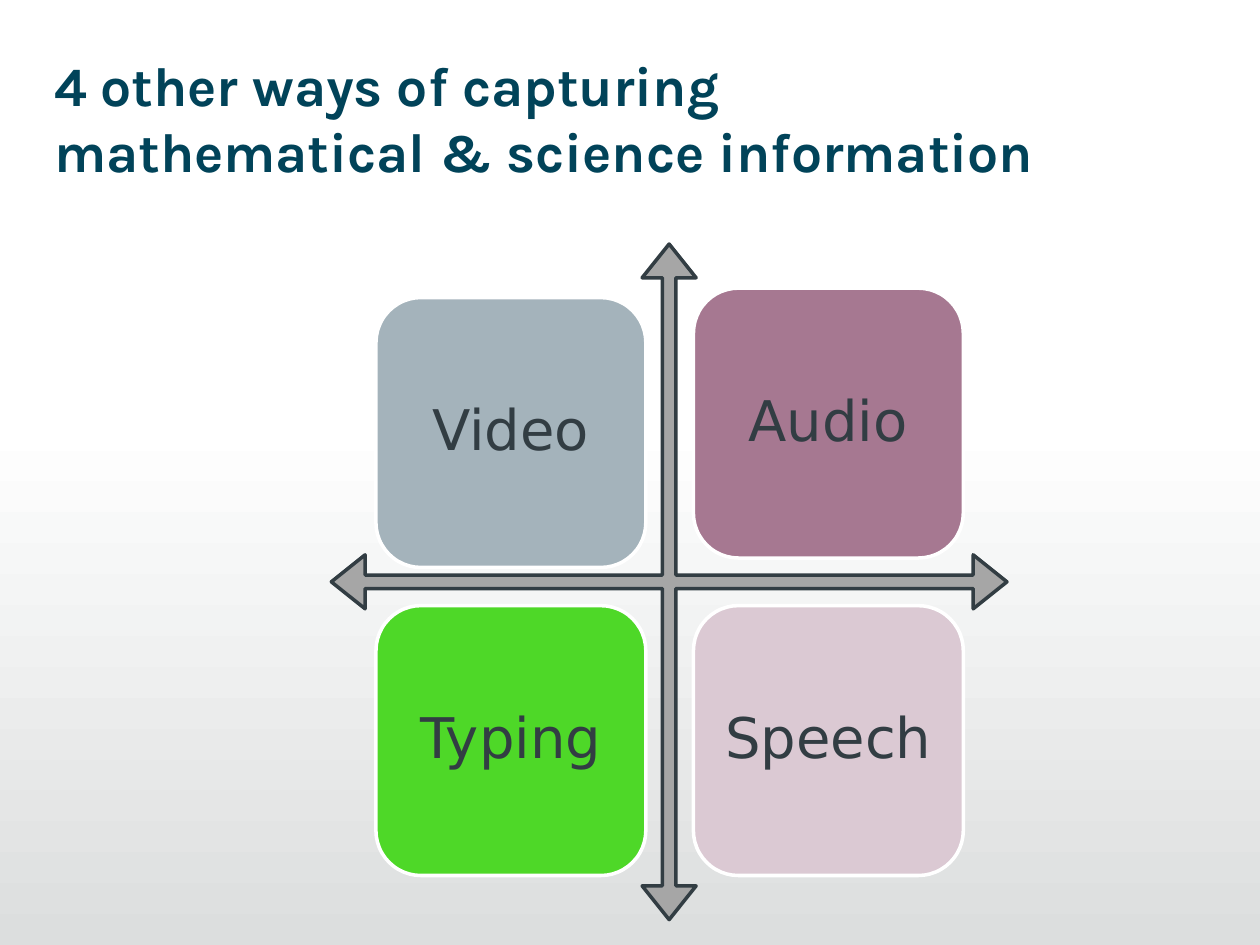
"""Build a slide with four ways of capturing information around a crossed arrow."""
from dataclasses import dataclass

from pptx import Presentation
from pptx.dml.color import RGBColor
from pptx.enum.shapes import MSO_SHAPE
from pptx.enum.text import MSO_ANCHOR, MSO_AUTO_SIZE, PP_ALIGN
from pptx.util import Cm, Pt

RECTANGLE = MSO_SHAPE.RECTANGLE
ROUNDED = MSO_SHAPE.ROUNDED_RECTANGLE
QUAD_ARROW = MSO_SHAPE.QUAD_ARROW
TOP, MIDDLE = MSO_ANCHOR.TOP, MSO_ANCHOR.MIDDLE
LEFT, CENTER = PP_ALIGN.LEFT, PP_ALIGN.CENTER
NO_AUTOFIT = MSO_AUTO_SIZE.NONE


@dataclass(frozen=True)
class Theme:
    title_font: str = "Karla"
    label_font: str = "DejaVu Sans"
    title_size: float = 31.5
    label_size: float = 32
    outline: float = 2
    title: str = "014359"
    ink: str = "323D43"
    white: str = "FFFFFF"
    fade: str = "DCDEDE"
    arrow: str = "A6A6A6"
    video: str = "A4B3BB"
    audio: str = "A67891"
    typing: str = "4ED828"
    speech: str = "DBC9D3"


def add_block(kind, left, top, width, height, fill, line):
    block = page.shapes.add_shape(kind, Cm(left), Cm(top), Cm(width), Cm(height))
    block.shadow.inherit = False
    block.fill.solid()
    block.fill.fore_color.rgb = RGBColor.from_string(fill)
    block.line.color.rgb = RGBColor.from_string(line)
    block.line.width = Pt(theme.outline)
    return block


def write(box, text, frame_format, paragraph_format, font_format, color):
    frame = box.text_frame
    frame.text = text
    para = frame.paragraphs[0]
    for target, values in (
        (frame, frame_format),
        (para, paragraph_format),
        (para.runs[0].font, font_format),
    ):
        for name, value in values.items():
            setattr(target, name, value)
    para.runs[0].font.color.rgb = RGBColor.from_string(color)


theme = Theme()
deck = Presentation()
deck.slide_width, deck.slide_height = Cm(25.4), Cm(19.05)
page = deck.slides.add_slide(deck.slide_layouts[5])

title = page.shapes.title
title_place = {"left": Cm(1.09), "top": Cm(0.91), "width": Cm(20.4), "height": Cm(2.01)}
for name, value in title_place.items():
    setattr(title, name, value)
write(
    title,
    "4 other ways of capturing mathematical & science information",
    {
        "word_wrap": True,
        "auto_size": NO_AUTOFIT,
        "vertical_anchor": TOP,
        "margin_left": Cm(0),
        "margin_right": Cm(0.25),
        "margin_top": Cm(0.13),
        "margin_bottom": Cm(0.13),
    },
    {"alignment": LEFT},
    {"name": theme.title_font, "size": Pt(theme.title_size), "bold": True},
    theme.title,
)

backdrop = add_block(RECTANGLE, 0, 8.46, 25.4, 10.59, theme.white, theme.white)
backdrop.line.fill.background()
backdrop.fill.gradient()
backdrop.fill.gradient_angle = 270
for stop, color, position in zip(
    backdrop.fill.gradient_stops, (theme.white, theme.fade), (0, 1)
):
    stop.color.rgb = RGBColor.from_string(color)
    stop.position = position

arrow = add_block(QUAD_ARROW, 6.68, 4.92, 13.62, 13.62, theme.arrow, theme.ink)
for index, value in enumerate((0.02, 0.04, 0.05)):
    arrow.adjustments[index] = value

card_size = 5.44
left_column, right_column = 7.58, 13.98
bottom_row = 12.21
cards = (
    ("Video", left_column, 6.0, theme.video),
    ("Audio", right_column, 5.81, theme.audio),
    ("Typing", left_column, bottom_row, theme.typing),
    ("Speech", right_column, bottom_row, theme.speech),
)
label_frame = {"word_wrap": True, "vertical_anchor": MIDDLE}
for side in ("left", "right", "top", "bottom"):
    label_frame[f"margin_{side}"] = Cm(0.33)
label_paragraph = {"alignment": CENTER, "line_spacing": 0.9}
label_font = {"name": theme.label_font, "size": Pt(theme.label_size)}
for label, left, top, fill in cards:
    card = add_block(ROUNDED, left, top, card_size, card_size, fill, theme.white)
    write(card, label, label_frame, label_paragraph, label_font, theme.ink)

deck.save("out.pptx")
